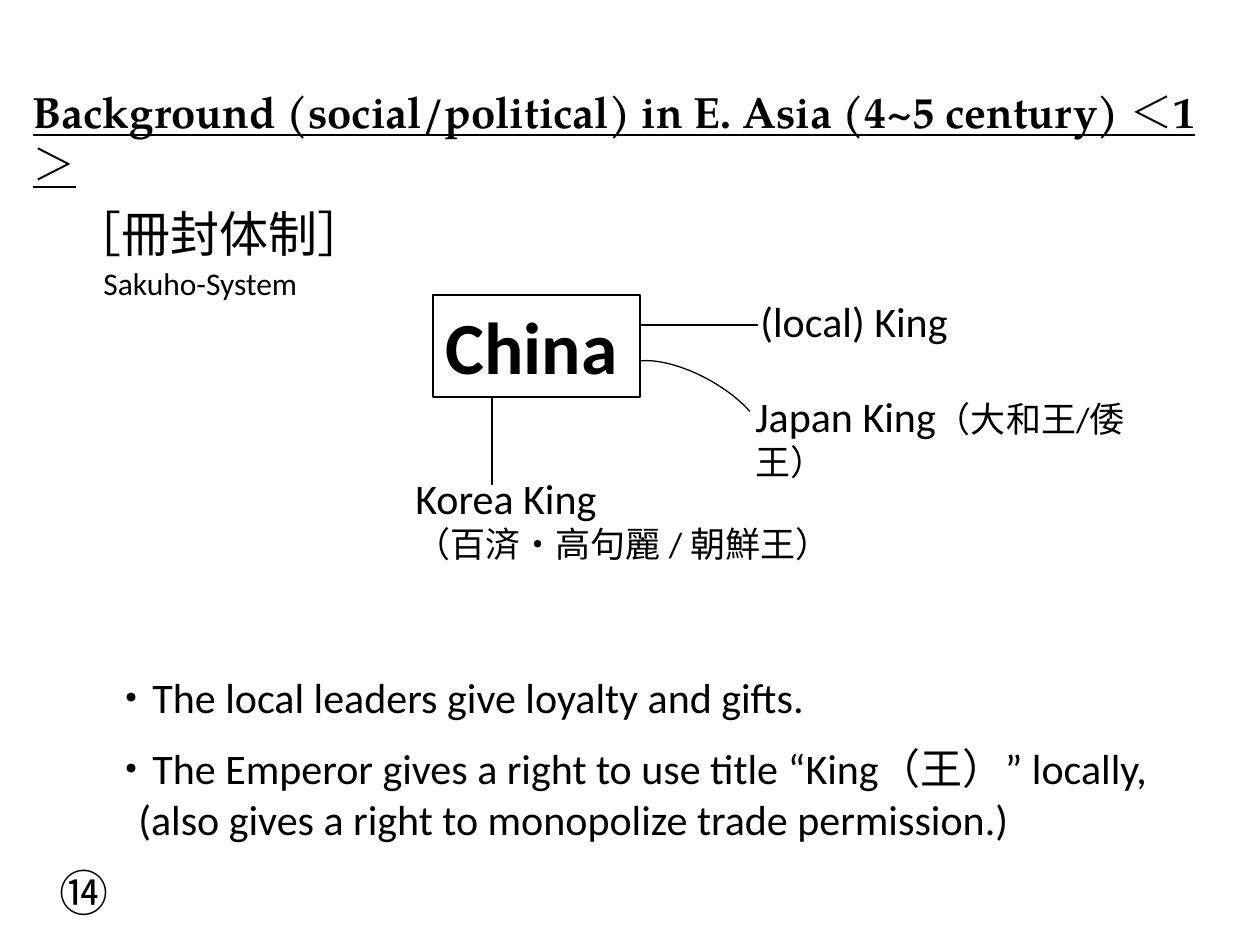
from lxml.etree import SubElement
from pptx import Presentation
from pptx.dml.color import RGBColor
from pptx.enum.shapes import MSO_CONNECTOR, MSO_SHAPE
from pptx.enum.text import MSO_ANCHOR, MSO_AUTO_SIZE, PP_ALIGN
from pptx.oxml.ns import qn
from pptx.util import Emu, Pt

INK = "000000"


def px(n):
    return Emu(round(n * 914400 / 126))


def color(code):
    return RGBColor.from_string(code)


def write(para, words, size=24, font="Calibri", bold=False, under=False):
    """Add a run, with one typeface for Latin and East Asian text."""
    run = para.add_run()
    run.text = words
    face = run.font
    face.name, face.size = font, Pt(size)
    face.bold, face.underline = bold, under
    face.color.rgb = color(INK)
    east = SubElement(face._element, qn("a:ea"))
    east.set("typeface", font)
    face._element.find(qn("a:latin")).addnext(east)


def place(shape, left, top, width, height):
    shape.left, shape.top = px(left), px(top)
    shape.width, shape.height = px(width), px(height)


def setup(frame):
    """Set wrapping and top-left text; return the first paragraph."""
    frame.word_wrap = True
    frame.auto_size = MSO_AUTO_SIZE.NONE
    frame.vertical_anchor = MSO_ANCHOR.TOP
    para = frame.paragraphs[0]
    para.alignment = PP_ALIGN.LEFT
    return para


def head(slide, words, box):
    title = slide.shapes.title
    place(title, *box)
    para = setup(title.text_frame)
    para.line_spacing = 1.0
    para.space_before = Pt(0)
    write(para, words, size=25, font="TeX Gyre Pagella", bold=True, under=True)


def label(slide, words, box, **style):
    """Add a text box with one formatted run; return its frame."""
    frame = slide.shapes.add_textbox(*map(px, box)).text_frame
    write(setup(frame), words, **style)
    return frame


def shape(slide, kind, box):
    item = slide.shapes.add_shape(kind, *map(px, box))
    item.shadow.inherit = False
    item.fill.background()
    item.line.color.rgb = color(INK)
    item.line.width = Pt(0.75)
    return item


def link(slide, *ends):
    line = slide.shapes.add_connector(MSO_CONNECTOR.STRAIGHT, *map(px, ends))
    line.line.color.rgb = color(INK)
    line.line.width = Pt(0.75)
    SubElement(line._element.spPr, qn("a:effectLst"))


def kings(slide):
    label(slide, "(local) King", (748, 289, 384, 63))
    japan = label(slide, "Japan King", (743, 384, 438, 63))
    write(japan.paragraphs[0], "（大和王/倭王）", size=20)
    korea = label(slide, "Korea King", (403, 466, 501, 106))
    write(korea.add_paragraph(), "（百済・高句麗 / 朝鮮王）", size=20)


def china(slide):
    box = shape(slide, MSO_SHAPE.RECTANGLE, (433, 295, 207, 102))
    write(setup(box.text_frame), "China", size=42, bold=True)
    link(slide, 640, 325, 758, 325)
    link(slide, 492, 397, 492, 485)
    arc = shape(slide, MSO_SHAPE.ARC, (612, 375, 159, 67))
    arc.adjustments[0] = 116.62
    arc.adjustments[1] = 200.74
    arc.rotation = 28.3


def points(slide):
    frame = label(slide, "・The local leaders give loyalty and gifts.",
                  (98, 640, 1082, 212))
    frame.paragraphs[0].line_spacing = 1.5
    right = frame.add_paragraph()
    right.space_before = Pt(12)
    write(right, "・The Emperor gives a right to use title “King（王）” locally,")
    trade = frame.add_paragraph()
    trade._p.get_or_add_pPr().set("marL", str(px(28)))
    write(trade, "(also gives a right to monopolize trade permission.)")


def main():
    deck = Presentation()
    deck.slide_width, deck.slide_height = px(1260), px(945)
    slide = deck.slides.add_slide(deck.slide_layouts[5])
    head(slide, "Background (social/political) in E. Asia (4~5 century) ＜1＞",
         (20, 78, 1231, 66))
    label(slide, "⑭", (47, 856, 98, 72), size=28, font="Noto Sans CJK JP")
    label(slide, "［冊封体制］", (60, 197, 335, 72), size=28)
    system = label(slide, "Sakuho-System", (91, 255, 246, 53), size=18)
    system.paragraphs[0].line_spacing = Pt(23)
    kings(slide)
    china(slide)
    points(slide)
    deck.save("out.pptx")


if __name__ == "__main__":
    main()
